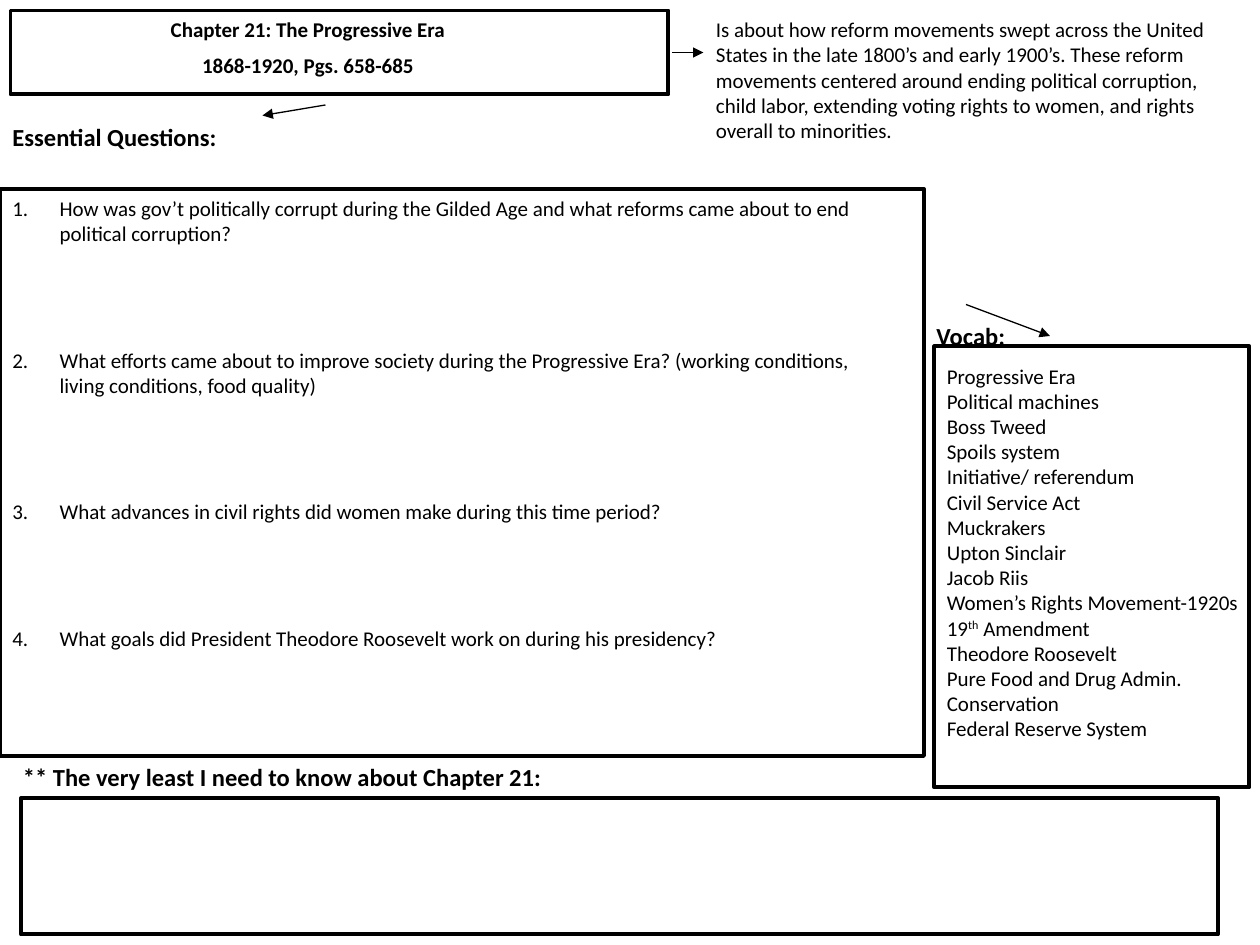
from lxml.etree import SubElement
from pptx import Presentation
from pptx.dml.color import RGBColor
from pptx.enum.shapes import MSO_CONNECTOR as Connector, MSO_SHAPE as Shape
from pptx.enum.text import MSO_ANCHOR as Anchor, MSO_AUTO_SIZE as AutoSize, PP_ALIGN as Align
from pptx.oxml.ns import qn
from pptx.util import Pt


def color(hex_string):
    return RGBColor.from_string(hex_string)


class StudyGuide:
    """The current slide and its style; all lengths are in points."""
    font, ink = "Calibri", "000000"
    body, heading_size = 12, 14
    border, thin = 2.25, 0.75
    indent = 27

    def __init__(self, slide):
        self.slide = slide

    def fill_text(self, frame, lines, size=body, bold=False, align=Align.LEFT,
                  gap=0, hanging=False, numbered=False):
        frame.word_wrap = True
        frame.auto_size = AutoSize.NONE
        frame.vertical_anchor = Anchor.TOP
        for i, line in enumerate(lines):
            paragraph = frame.paragraphs[0] if i == 0 else frame.add_paragraph()
            # A line is a string, or parts whose odd members are superscript
            parts = [line] if isinstance(line, str) else line
            for j, part in enumerate(parts):
                run = paragraph.add_run()
                run.text = part
                if j % 2:
                    run._r.get_or_add_rPr().set("baseline", "30000")
            paragraph.alignment = align
            paragraph.line_spacing = 1.0
            paragraph.space_before = Pt(gap if i else 0)
            font = paragraph.font
            font.name, font.size, font.bold = self.font, Pt(size), bold
            font.color.rgb = color(self.ink)
            if hanging or numbered:
                properties = paragraph._p.get_or_add_pPr()
                properties.set("marL", str(Pt(self.indent)))
                properties.set("indent", str(-Pt(self.indent)))
                if numbered:
                    bullet = properties.makeelement(qn("a:buAutoNum"), {"type": "arabicPeriod"})
                    properties.find(qn("a:defRPr")).addprevious(bullet)

    def title(self, lines, left, top, width, height):
        title = self.slide.shapes.title
        title.left, title.top = Pt(left), Pt(top)
        title.width, title.height = Pt(width), Pt(height)
        self.fill_text(title.text_frame, lines, bold=True, align=Align.CENTER, gap=6)

    def text(self, lines, left, top, width, height, **style):
        box = self.slide.shapes.add_textbox(Pt(left), Pt(top), Pt(width), Pt(height))
        self.fill_text(box.text_frame, lines, **style)

    def heading(self, line, left, top, width):
        self.text([line], left, top, width, 24, size=self.heading_size, bold=True)

    def frame(self, left, top, width, height):
        box = self.slide.shapes.add_shape(
            Shape.RECTANGLE, Pt(left), Pt(top), Pt(width), Pt(height))
        box.shadow.inherit = False
        box.fill.background()
        box.line.color.rgb = color(self.ink)
        box.line.width = Pt(self.border)

    def arrow(self, x1, y1, x2, y2):
        arrow = self.slide.shapes.add_connector(
            Connector.STRAIGHT, Pt(x1), Pt(y1), Pt(x2), Pt(y2))
        arrow.line.color.rgb = color(self.ink)
        arrow.line.width = Pt(self.thin)
        SubElement(arrow.line._get_or_add_ln(), qn("a:tailEnd"), type="triangle")
        SubElement(arrow._element.spPr, qn("a:effectLst"))


QUESTIONS = [
    "How was gov’t politically corrupt during the Gilded Age and what reforms "
    "came about to end political corruption?",
    "What efforts came about to improve society during the Progressive Era? "
    "(working conditions, living conditions, food quality)",
    "What advances in civil rights did women make during this time period?",
    "What goals did President Theodore Roosevelt work on during his presidency?",
]
VOCAB = [
    "Progressive Era", "Political machines", "Boss Tweed", "Spoils system",
    "Initiative/ referendum", "Civil Service Act", "Muckrakers", "Upton Sinclair",
    "Jacob Riis", "Women’s Rights Movement-1920s", ("19", "th", " Amendment"),
    "Theodore Roosevelt", "Pure Food and Drug Admin.", "Conservation",
    "Federal Reserve System",
]
SUMMARY = (
    "Is about how reform movements swept across the United States in the late "
    "1800’s and early 1900’s. These reform movements centered around ending "
    "political corruption, child labor, extending voting rights to women, and "
    "rights overall to minorities."
)


def main():
    deck = Presentation()
    deck.slide_width, deck.slide_height = Pt(720), Pt(540)
    guide = StudyGuide(deck.slides.add_slide(deck.slide_layouts[5]))

    # Chapter title and what it is about
    guide.frame(6, 6, 376, 48)
    guide.title(["Chapter 21: The Progressive Era", "1868-1920, Pgs. 658-685"],
                0, 6, 352, 65)
    guide.arrow(384, 30, 402, 30)
    guide.text([SUMMARY], 402, 6, 300, 101)

    # Essential questions, with room to answer each
    guide.arrow(186, 60, 150, 66)
    guide.heading("Essential Questions:", 0, 66, 414)
    guide.frame(0, 108, 528, 324)
    guide.text(QUESTIONS, 0, 108, 504, 269, gap=58, numbered=True)

    # Vocabulary
    guide.arrow(552, 174, 600, 192)
    guide.heading("Vocab:", 528, 180, 180)
    guide.frame(534, 198, 180, 252)
    guide.text(VOCAB, 534, 204, 186, 238, hanging=True)

    # Closing summary
    guide.heading("** The very least I need to know about Chapter 21:", 6, 432, 414)
    guide.frame(12, 456, 684, 78)

    deck.save("out.pptx")


if __name__ == "__main__":
    main()
